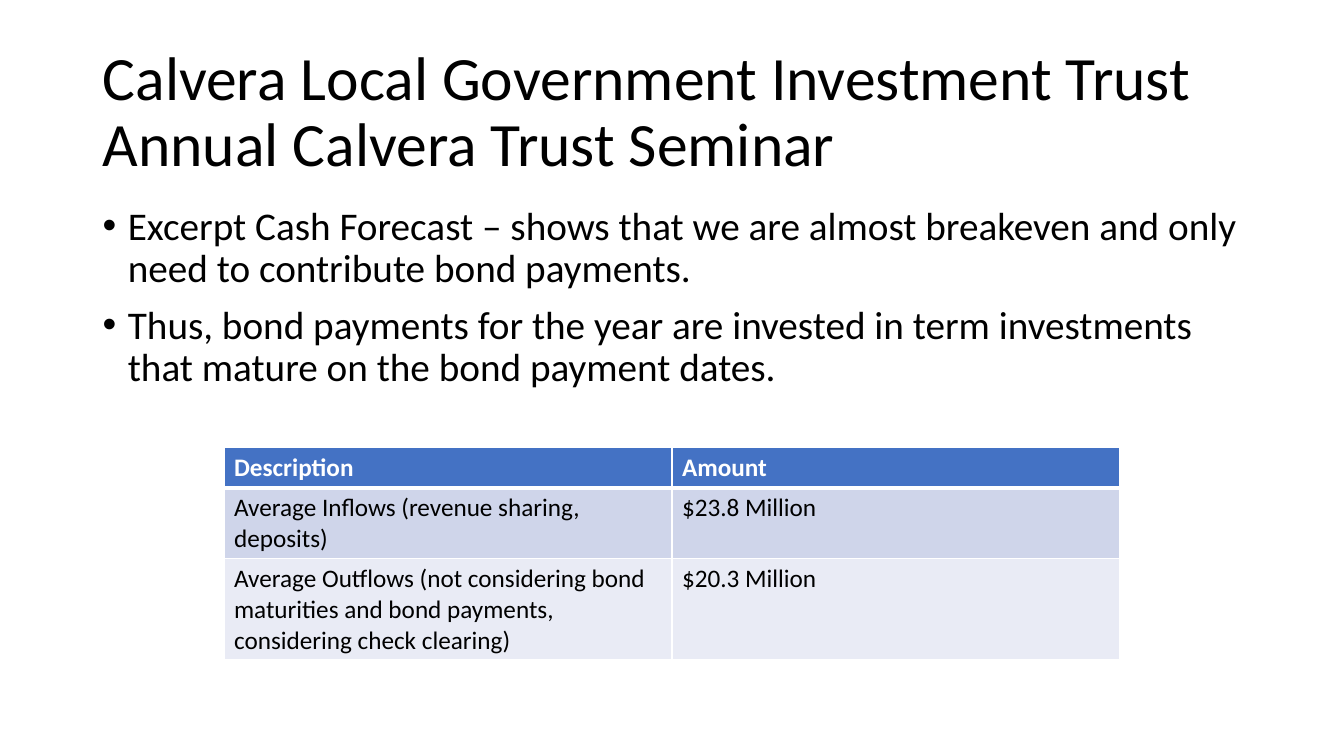
from pptx import Presentation
from pptx.dml.color import RGBColor
from pptx.enum.text import MSO_ANCHOR
from pptx.oxml.ns import qn
from pptx.util import Inches, Pt
from lxml import etree

MID, TOP = MSO_ANCHOR.MIDDLE, MSO_ANCHOR.TOP
THEME = {
    "font": "Calibri", "ink": "000000", "white": "FFFFFF",
    "head": "4472C4", "bands": ["CFD5EA", "E9EBF5"],
    "title": 44, "body": 28, "cell": 18,
}
TITLE = "Calvera Local Government Investment Trust\nAnnual Calvera Trust Seminar"
POINTS = [
    "Excerpt Cash Forecast – shows that we are almost breakeven and only need to contribute bond payments.",
    "Thus, bond payments for the year are invested in term investments that mature on the bond payment dates.",
]
ROWS = [
    ("Description", "Amount"),
    ("Average Inflows (revenue sharing, deposits)", "$23.8 Million"),
    ("Average Outflows (not considering bond maturities and bond payments, considering check clearing)",
     "$20.3 Million"),
]
HEIGHTS = [0.39, 0.68, 0.97]

deck = Presentation()
deck.slide_width, deck.slide_height = Inches(13.33), Inches(7.5)
wide = deck.slide_width
slide = deck.slides.add_slide(deck.slide_layouts[6])


def style(para, size, color, bold=False):
    font = para.font
    font.name, font.size, font.bold = THEME["font"], Pt(size), bold
    font.color.rgb = RGBColor.from_string(color)


def add_box(top, height, anchor):
    left = Inches(0.92)
    box = slide.shapes.add_textbox(left, Inches(top), wide - 2 * left, Inches(height))
    frame = box.text_frame
    frame.word_wrap, frame.vertical_anchor = True, anchor
    return frame


para = add_box(0.4, 1.45, MID).paragraphs[0]
para.text, para.line_spacing = TITLE, 0.9
style(para, THEME["title"], THEME["ink"])

frame = add_box(2, 4.76, TOP)
for i, point in enumerate(POINTS):
    para = frame.add_paragraph() if i else frame.paragraphs[0]
    para.text, para.line_spacing, para.space_before = point, 0.9, Pt(10)
    props = para._p.get_or_add_pPr()
    props.set("marL", str(Inches(0.25)))
    props.set("indent", str(-Inches(0.25)))
    etree.SubElement(props, qn("a:buFont"), typeface="Arial")
    etree.SubElement(props, qn("a:buChar"), char="•")
    style(para, THEME["body"], THEME["ink"])

table = slide.shapes.add_table(
    len(ROWS), 2, wide // 6, Inches(4.44), wide * 2 // 3, Inches(sum(HEIGHTS))).table
for r, texts in enumerate(ROWS):
    table.rows[r].height = Inches(HEIGHTS[r])
    fill = THEME["bands"][(r - 1) % 2] if r else THEME["head"]
    for c, text in enumerate(texts):
        cell = table.cell(r, c)
        cell.text = text
        style(cell.text_frame.paragraphs[0], THEME["cell"],
              THEME["ink"] if r else THEME["white"], r == 0)
        props = cell._tc.get_or_add_tcPr()
        for side in "LRTB":
            thick = 3 if (r, side) in [(0, "B"), (1, "T")] else 1
            line = etree.SubElement(props, qn("a:ln" + side), w=str(Pt(thick)))
            solid = etree.SubElement(line, qn("a:solidFill"))
            etree.SubElement(solid, qn("a:srgbClr"), val=THEME["white"])
        cell.fill.solid()
        cell.fill.fore_color.rgb = RGBColor.from_string(fill)

deck.save("out.pptx")
